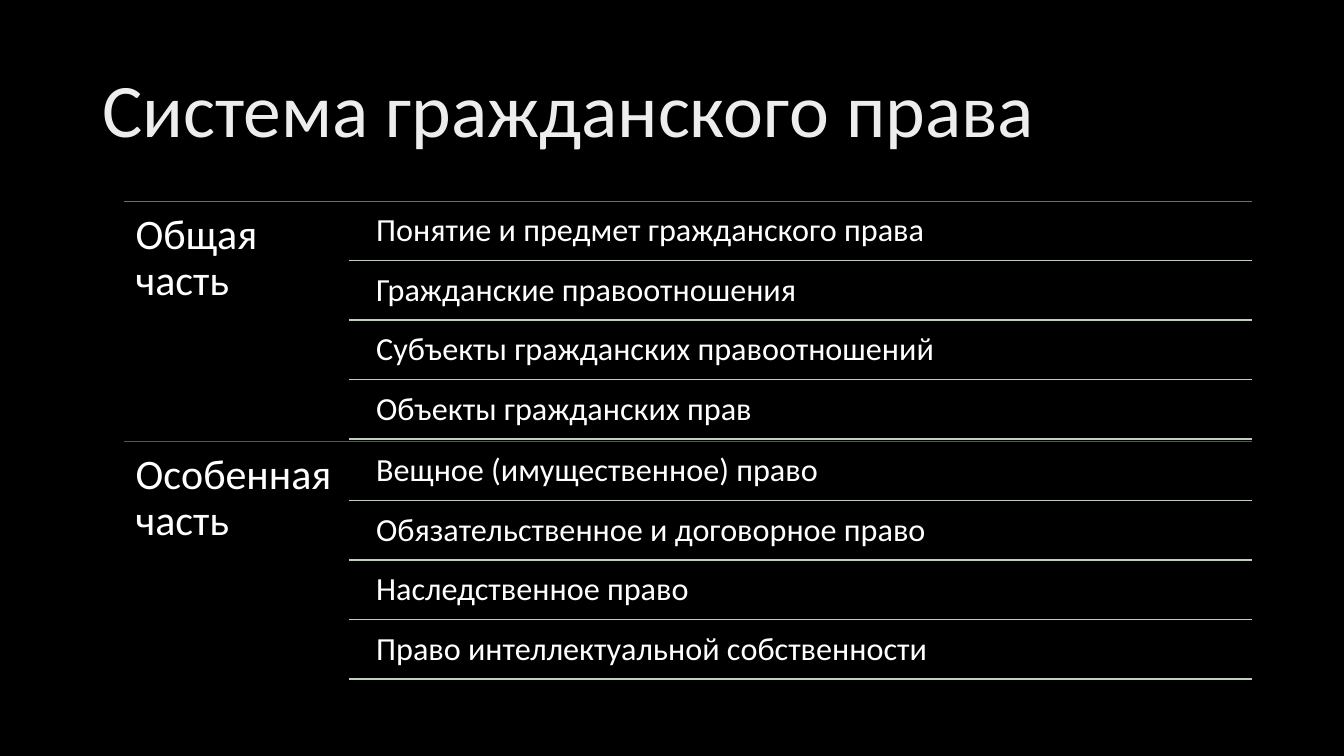
from pptx import Presentation
from pptx.dml.color import RGBColor
from pptx.enum.shapes import MSO_CONNECTOR as Link
from pptx.enum.text import MSO_ANCHOR as Anchor
from pptx.oxml.ns import qn
from pptx.util import Cm, Pt
from lxml import etree

BLACK = RGBColor(0x00, 0x00, 0x00)
WHITE = RGBColor(0xFF, 0xFF, 0xFF)
PALE = RGBColor(0xED, 0xED, 0xED)
GREEN = RGBColor(0x4E, 0x85, 0x42)
PURPLE = RGBColor(0x60, 0x48, 0x78)
GRAY = RGBColor(0xC2, 0xCE, 0xC0)

PARTS = [
    ("Общая часть", GREEN, [
        "Понятие и предмет гражданского права",
        "Гражданские правоотношения",
        "Субъекты гражданских правоотношений",
        "Объекты гражданских прав",
    ]),
    ("Особенная часть", PURPLE, [
        "Вещное (имущественное) право",
        "Обязательственное и договорное право",
        "Наследственное право",
        "Право интеллектуальной собственности",
    ]),
]
LEFT, RIGHT, TOP = 3.12, 31.55, 5.08
PART_H, ROW_H = 6.05, 1.5

deck = Presentation()
deck.slide_width, deck.slide_height = Cm(33.87), Cm(19.05)
slide = deck.slides.add_slide(deck.slide_layouts[6])
slide.background.fill.solid()
slide.background.fill.fore_color.rgb = BLACK


def add_text(text, x, y, w, h, size, color=WHITE, pad=0.25, anchor=Anchor.TOP):
    box = slide.shapes.add_textbox(Cm(x), Cm(y), Cm(w), Cm(h))
    frame = box.text_frame
    frame.word_wrap = True
    frame.vertical_anchor = anchor
    frame.margin_left = frame.margin_right = Cm(pad)
    frame.margin_top = frame.margin_bottom = Cm(pad)
    para = frame.paragraphs[0]
    para.line_spacing = 0.9
    run = para.add_run()
    run.text = text
    run.font.name = "Calibri"
    run.font.size = Pt(size)
    run.font.color.rgb = color


def add_rule(x, y, color, width):
    """Draw a horizontal line from x to the right edge."""
    rule = slide.shapes.add_connector(Link.STRAIGHT, Cm(x), Cm(y), Cm(RIGHT), Cm(y))
    rule.line.color.rgb = color
    rule.line.width = Pt(width)
    etree.SubElement(rule.element.spPr, qn("a:effectLst"))


add_text("Система гражданского права", 2.33, 1.02, 29.21, 3.68, 54,
         color=PALE, anchor=Anchor.MIDDLE)

for i, (name, color, topics) in enumerate(PARTS):
    top = TOP + i * PART_H
    add_rule(LEFT, top, color, 0.5)
    add_text(name, LEFT, top, 5.69, PART_H, 30, pad=0.3)
    for j, topic in enumerate(topics):
        y = top + j * ROW_H
        add_text(topic, 9.23, y + 0.06, 22.3, 1.42, 23)
        add_rule(8.79, y + 1.48, GRAY, 1)

deck.save("out.pptx")
